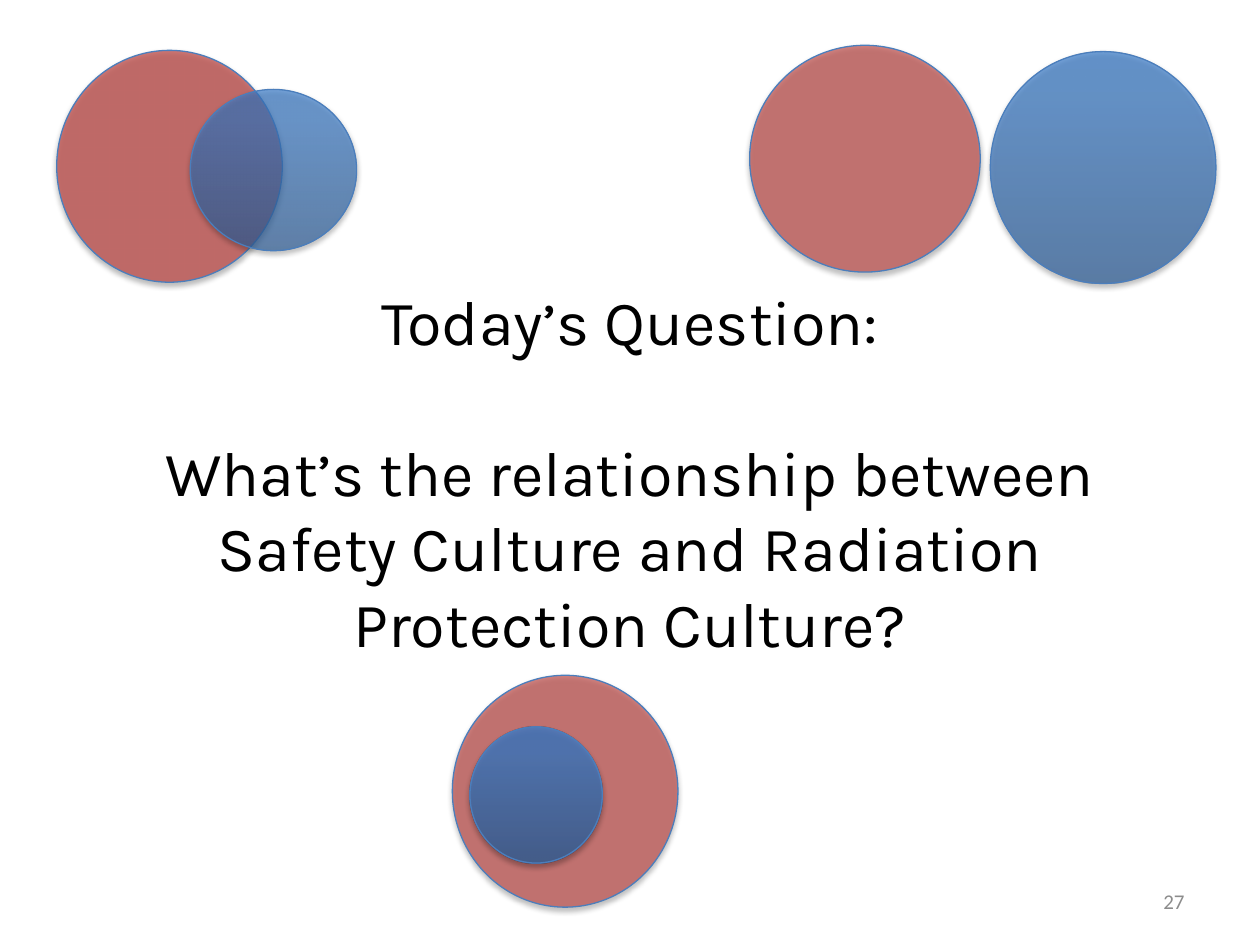
from lxml.etree import SubElement as add_child
from pptx import Presentation
from pptx.dml.color import RGBColor
from pptx.enum.shapes import MSO_SHAPE as Shape
from pptx.enum.text import MSO_ANCHOR as Anchor, PP_ALIGN as Align
from pptx.oxml.ns import qn
from pptx.util import Inches, Pt

RED = "C0504D"
BLUES = {0: "2F5F99", 80: "3D7CC7", 100: "3A7CCB"}
OUTLINE = "4B7EBC"
COLUMNS, ROWS = 100, 75


def color(value):
    """Turn a hex string into a colour."""
    return RGBColor.from_string(value)


def add_tint(parent, value, opacity):
    """Append a hex colour with its opacity in percent."""
    tint = add_child(parent, qn("a:srgbClr"), val=value)
    add_child(tint, qn("a:alpha"), val=str(opacity * 1000))


class VennPage:
    """Hold the slide, its grid and the look of its text and circles."""

    def __init__(self, deck):
        """Set the slide size and open a blank slide."""
        deck.slide_width, deck.slide_height = Inches(10), Inches(7.5)
        self.column = deck.slide_width / COLUMNS
        self.row = deck.slide_height / ROWS
        self.page = deck.slides.add_slide(deck.slide_layouts[6])

    def place(self, left, top, width, height):
        """Turn grid columns and rows into lengths."""
        return (round(left * self.column), round(top * self.row),
                round(width * self.column), round(height * self.row))

    def text(self, area, lines, font, size, ink, align, gap=0):
        """Add a vertically centred text box with a gap between paragraphs."""
        frame = self.page.shapes.add_textbox(*self.place(*area)).text_frame
        frame.word_wrap = True
        frame.vertical_anchor = Anchor.MIDDLE
        frame.text = "\n".join(lines)
        for index, para in enumerate(frame.paragraphs):
            para.alignment = align
            para.space_before = Pt(gap if index else 0)
            para.font.name, para.font.size = font, Pt(size)
            para.font.color.rgb = color(ink)

    def circle(self, area, opacity):
        """Add an outlined circle, ready for its fill, with a soft shadow."""
        circle = self.page.shapes.add_shape(Shape.OVAL, *self.place(*area))
        circle.line.color.rgb = color(OUTLINE)
        circle.line.width = Pt(0.75)
        circle.shadow.inherit = False
        effects = circle._element.spPr.find(qn("a:effectLst"))
        shadow = add_child(effects, qn("a:outerShdw"), blurRad=str(Pt(3.1)),
                           dist=str(Pt(1.8)), dir="5400000", rotWithShape="0")
        add_tint(shadow, "000000", 35)
        return circle

    def red_circle(self, area, opacity):
        """Add a see-through red circle."""
        circle = self.circle(area, opacity)
        circle.fill.solid()
        fill = circle._element.spPr.find(qn("a:solidFill"))
        add_tint(fill, RED, opacity)

    def blue_circle(self, area, opacity):
        """Add a see-through circle shaded from dark blue up to light blue."""
        circle = self.circle(area, opacity)
        circle.fill.gradient()
        circle.fill.gradient_angle = 90
        stops = circle._element.spPr.find(qn("a:gradFill")).find(qn("a:gsLst"))
        for stop in list(stops):
            stops.remove(stop)
        for position, value in BLUES.items():
            stop = add_child(stops, qn("a:gs"), pos=str(position * 1000))
            add_tint(stop, value, opacity)


def main():
    """Build the question slide with its three circle pairs."""
    deck = Presentation()
    venn = VennPage(deck)
    question = ["Today’s Question:",
                "What’s the relationship between Safety Culture "
                "and Radiation Protection Culture?"]
    venn.text((5, 32, 90, 10.8), question, "Karla", 36, "000000",
              Align.CENTER, gap=43)
    venn.text((71.7, 69.5, 23.3, 4), ["27"], "Calibri", 12, "8C8C8C", Align.RIGHT)
    venn.red_circle((4.5, 4, 17.9, 18.4), 76)
    venn.blue_circle((15.1, 7.1, 13.2, 12.8), 67)
    venn.red_circle((35.9, 53.6, 17.9, 18.4), 70)
    venn.blue_circle((37.3, 57.7, 10.5, 10.8), 77)
    venn.blue_circle((78.6, 4.1, 17.9, 18.4), 70)
    venn.red_circle((59.5, 3.6, 18.3, 18), 70)
    deck.save("out.pptx")


if __name__ == "__main__":
    main()
